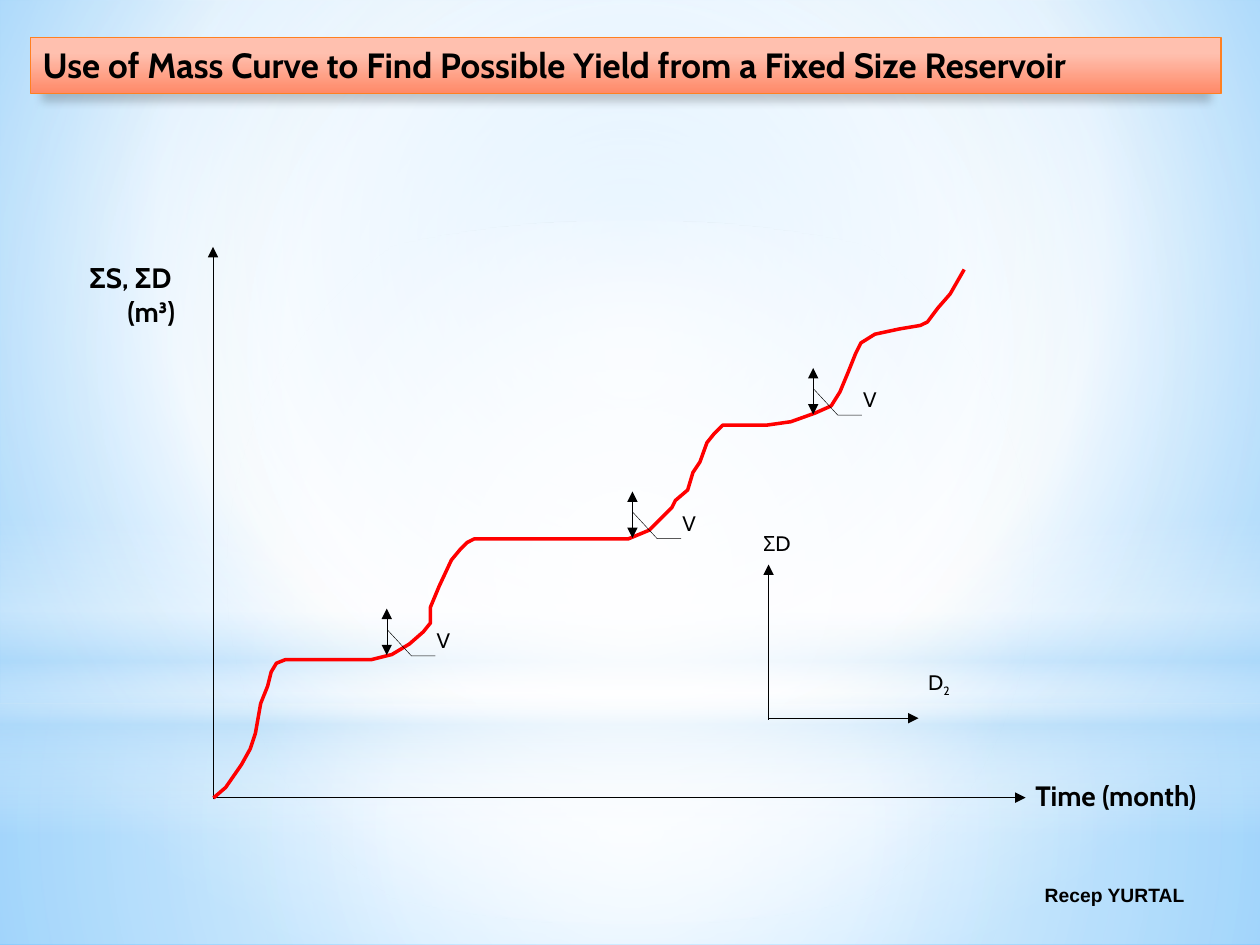
import pptx
import pptx.dml.color
import pptx.enum.shapes
import pptx.enum.text
import pptx.oxml
import pptx.oxml.ns
import pptx.util

Pt = pptx.util.Pt
qn = pptx.oxml.ns.qn
SHAPE = pptx.enum.shapes.MSO_SHAPE
ALIGN = pptx.enum.text.PP_ALIGN
ANCHOR = pptx.enum.text.MSO_ANCHOR
NS = pptx.oxml.ns.nsdecls("a")

MASS_CURVE = [
    (121.7, 455.8), (128.9, 450), (138.2, 437), (142.6, 428.4), (146.2, 419),
    (149, 401.8), (152.6, 391.7), (154.8, 384.5), (158.4, 379.4),
    (162.7, 377.3), (212.4, 377.3), (223.9, 374.4), (234, 367.9),
    (241.9, 360.7), (245.5, 355.7), (246.2, 347), (251.3, 334.8),
    (257.8, 320.4), (262.8, 313.9), (267.1, 310.3), (271.4, 308.2),
    (359.3, 308.2), (370.8, 303.1), (383.8, 290.2), (385.9, 285.8),
    (393.1, 280.1), (396, 270), (399.6, 264.2), (403.9, 252.7),
    (407.5, 247.7), (412.6, 242.6), (438.5, 242.6), (452.2, 241.2),
    (465.8, 236.2), (475.2, 231.8), (479.5, 223.9), (484.6, 212.4),
    (488.9, 202.3), (492.5, 195.8), (500.4, 190.8), (514.1, 187.9),
    (525.6, 186.5), (529.9, 183.6), (535.7, 176.4), (542.9, 167.8),
    (550.8, 154.1),
]
VOLUMES = [(221, 347.8), (361.4, 280.8), (464.7, 210.3)]
CENTRE = (50, 50, 50, 50)


def color(value):
    return pptx.dml.color.RGBColor.from_string(value)


def set_gradient(parent, stops, focus=None):
    gs = "".join(
        f'<a:gs pos="{pos * 1000}"><a:srgbClr val="{rgb}">'
        f'<a:alpha val="{alpha * 1000}"/></a:srgbClr></a:gs>'
        for pos, rgb, alpha in stops)
    if focus:
        l, t, r, b = (v * 1000 for v in focus)
        shade = (f'<a:path path="circle"><a:fillToRect l="{l}" t="{t}" '
                 f'r="{r}" b="{b}"/></a:path>')
    else:
        shade = '<a:lin ang="5400000" scaled="0"/>'
    grad = pptx.oxml.parse_xml(
        f'<a:gradFill {NS} rotWithShape="1"><a:gsLst>{gs}</a:gsLst>{shade}</a:gradFill>')
    parent.replace(parent.find(qn("a:solidFill")), grad)


def add_shape(s, kind, x, y, w, h):
    sp = s.shapes.add_shape(kind, Pt(x), Pt(y), Pt(w), Pt(h))
    sp.shadow.inherit = False
    sp.fill.background()
    sp.line.fill.background()
    return sp


def add_gradient_shape(s, kind, box, stops, focus=None):
    sp = add_shape(s, kind, *box)
    sp.fill.solid()
    set_gradient(sp.element.spPr, stops, focus)
    return sp


def set_line(sp, rgb, width):
    sp.line.color.rgb = color(rgb)
    sp.line.width = Pt(width)


def set_text(sp, text, size, bold=False, font="Cabin", inset=0.72, anchor=ANCHOR.TOP):
    tf = sp.text_frame
    tf.text = text
    tf.word_wrap = True
    tf.vertical_anchor = anchor
    if inset is not None:
        tf.margin_left = tf.margin_right = Pt(inset)
        tf.margin_top = tf.margin_bottom = Pt(inset)
    for p in tf.paragraphs:
        p.alignment = ALIGN.LEFT
        for r in p.runs:
            r.font.name = font
            r.font.size = Pt(size)
            r.font.bold = bold
            r.font.color.rgb = color("000000")
    return tf


def add_label(s, text, box, size, bold=False):
    return set_text(add_shape(s, SHAPE.ROUNDED_RECTANGLE, *box), text, size, bold)


def add_arrow(s, x1, y1, x2, y2, both=False):
    line = s.shapes.add_connector(
        pptx.enum.shapes.MSO_CONNECTOR.STRAIGHT, Pt(x1), Pt(y1), Pt(x2), Pt(y2))
    set_line(line, "000000", 0.25)
    ln = line.line._get_or_add_ln()
    for end in ("headEnd", "tailEnd") if both else ("tailEnd",):
        ln.append(pptx.oxml.parse_xml(f'<a:{end} {NS} type="triangle"/>'))
    line.element.spPr.append(pptx.oxml.parse_xml(f"<a:effectLst {NS}/>"))


def add_axes(s, x, top, base, right):
    add_arrow(s, x, base + 1, x, top)
    add_arrow(s, x, base, right, base)


def add_curve(s, points):
    scale = Pt(1)
    builder = s.shapes.build_freeform(*points[0], scale=scale)
    builder.add_line_segments(points[1:], close=False)
    sp = builder.convert_to_shape()
    sp.shadow.inherit = False
    sp.fill.background()
    set_line(sp, "FF0000", 2)


def add_volume(s, x, y):
    add_arrow(s, x, y, x, y + 26.6, both=True)
    sp = add_shape(s, SHAPE.LINE_CALLOUT_2_NO_BORDER, x + 27.8, y + 10.1, 24.5, 33.8)
    for i, value in enumerate((0.5, 0, 0.5, -0.56, 0.06, -1.12)):
        sp.adjustments[i] = value
    set_line(sp, "000000", 0.25)
    set_text(sp, "V", 12)


def add_backdrop(s):
    s.background.fill.solid()
    set_gradient(s.element.find(".//" + qn("p:bgPr")),
                 [(0, "9ED5FF", 100), (60, "FFFFFF", 100), (100, "5BB9FF", 100)],
                 (20, 10, 20, 60))
    add_gradient_shape(s, SHAPE.RECTANGLE, (0, 402, 720, 138),
                       [(0, "FFFFFF", 91), (37, "FFFFFF", 76), (100, "B4DCFA", 79)], CENTRE)
    add_gradient_shape(s, SHAPE.RECTANGLE, (0, 0, 720, 402),
                       [(0, "FFFFFF", 89), (48, "FFFFFF", 62), (100, "B4DCFA", 79)], CENTRE)
    add_gradient_shape(s, SHAPE.RECTANGLE, (0, 296.6, 720, 180),
                       [(0, "FFFFFF", 0), (29, "FFFFFF", 30), (45, "B4DCFA", 40),
                        (55, "FFFFFF", 26), (65, "B4DCFA", 60), (100, "FFFFFF", 0)])
    add_gradient_shape(s, SHAPE.OVAL, (0, 126, 720, 402),
                       [(0, "FFFFFF", 100), (56, "FFFFFF", 0)], CENTRE)


def add_title(s, text):
    sp = add_gradient_shape(s, SHAPE.RECTANGLE, (17.3, 21.6, 680.4, 31.7),
                            [(28, "FFC0AF", 100), (100, "FF8968", 100)])
    set_line(sp, "FF8021", 0.75)
    set_text(sp, text, 20, True, inset=None)
    sp.element.spPr.find(qn("a:effectLst")).append(pptx.oxml.parse_xml(
        f'<a:outerShdw {NS} blurRad="{Pt(5)}" dist="{Pt(4)}" dir="5400000" sx="98000" '
        'algn="b" rotWithShape="0"><a:srgbClr val="000000"><a:alpha val="20000"/>'
        '</a:srgbClr></a:outerShdw>'))


def add_author(s, name):
    sp = s.shapes.add_textbox(Pt(486), Pt(496.8), Pt(198), Pt(28.8))
    tf = set_text(sp, name, 11, True, "Arial", None, ANCHOR.MIDDLE)
    tf.paragraphs[0].alignment = ALIGN.RIGHT


def add_demand_label(s):
    tf = add_label(s, "D", (528.5, 380.9, 23, 28.1), 12)
    r = tf.paragraphs[0].add_run()
    r.text = "2"
    r.font.name = "Cabin"
    r.font.size = Pt(12)
    r.font.color.rgb = color("000000")
    r.font._element.set("baseline", "-25000")


def main():
    prs = pptx.Presentation()
    prs.slide_width, prs.slide_height = Pt(720), Pt(540)
    s = prs.slides.add_slide(prs.slide_layouts[6])
    add_backdrop(s)
    add_author(s, "Recep YURTAL")
    add_axes(s, 121.7, 141.1, 455.8, 586.1)
    add_curve(s, MASS_CURVE)
    for x, y in VOLUMES:
        add_volume(s, x, y)
    add_axes(s, 439.2, 322.6, 410.4, 524.9)
    add_demand_label(s)
    add_label(s, "Time (month)", (589, 442.1, 115.9, 39.6), 16, True)
    tf = add_label(s, "ΣS, ΣD\n(m³)", (47.5, 145.4, 77.8, 59), 16, True)
    tf.paragraphs[1].alignment = ALIGN.CENTER
    add_label(s, "ΣD", (434.2, 301, 27.4, 34.6), 12)
    add_title(s, "Use of Mass Curve to Find Possible Yield from a Fixed Size Reservoir")
    prs.save("out.pptx")


if __name__ == "__main__":
    main()
